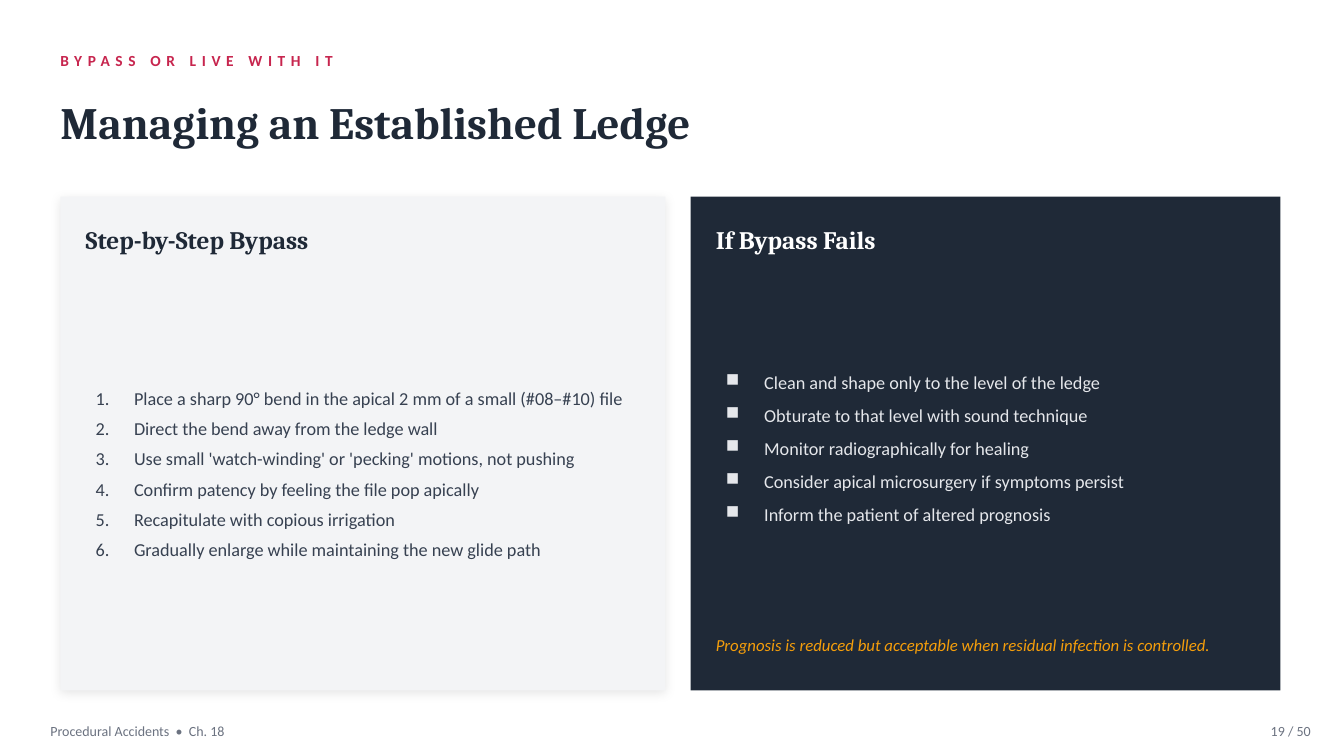
from lxml import etree
from pptx import Presentation
from pptx.dml.color import RGBColor
from pptx.enum.shapes import MSO_SHAPE
from pptx.enum.text import MSO_ANCHOR, MSO_AUTO_SIZE, PP_ALIGN
from pptx.oxml.ns import qn
from pptx.util import Inches, Pt

RECTANGLE = MSO_SHAPE.RECTANGLE
MIDDLE = MSO_ANCHOR.MIDDLE
NO_AUTOFIT = MSO_AUTO_SIZE.NONE
LEFT, RIGHT = PP_ALIGN.LEFT, PP_ALIGN.RIGHT
TITLE_ONLY = 5

HEADING_FONT, BODY_FONT = "Cambria", "Calibri"
COLORS = {
    "white": "FFFFFF",
    "navy": "1F2937",
    "crimson": "C7254E",
    "light_panel": "F3F4F6",
    "dark_text": "374151",
    "light_text": "E5E7EB",
    "amber": "F59E0B",
    "muted": "6B7280",
    "shadow": "000000",
}
LIST_INDENT = Inches(0.38)

BYPASS_STEPS = [
    "Place a sharp 90° bend in the apical 2 mm of a small (#08–#10) file",
    "Direct the bend away from the ledge wall",
    "Use small 'watch-winding' or 'pecking' motions, not pushing",
    "Confirm patency by feeling the file pop apically",
    "Recapitulate with copious irrigation",
    "Gradually enlarge while maintaining the new glide path",
]
FALLBACK_ACTIONS = [
    "Clean and shape only to the level of the ledge",
    "Obturate to that level with sound technique",
    "Monitor radiographically for healing",
    "Consider apical microsurgery if symptoms persist",
    "Inform the patient of altered prognosis",
]


def rgb(name):
    return RGBColor.from_string(COLORS[name])


def place(shape, left, top, width, height):
    shape.left, shape.top = Inches(left), Inches(top)
    shape.width, shape.height = Inches(width), Inches(height)


def add_bullet(paragraph, bullet):
    """Give a paragraph a hanging indent with a number or a character."""
    properties = paragraph._p.get_or_add_pPr()
    properties.set("marL", str(LIST_INDENT))
    properties.set("indent", str(-LIST_INDENT))
    if bullet == "number":
        etree.SubElement(properties, qn("a:buAutoNum"), type="arabicPeriod")
    else:
        etree.SubElement(properties, qn("a:buChar"), char=bullet)


def write_text(shape, lines, *, size, color, font=BODY_FONT, bold=False,
               italic=False, align=LEFT, spacing=0, space_after=0, bullet=None):
    frame = shape.text_frame
    frame.word_wrap = True
    frame.auto_size = NO_AUTOFIT
    frame.vertical_anchor = MIDDLE
    frame.margin_left = frame.margin_right = 0
    frame.margin_top = frame.margin_bottom = 0
    for index, line in enumerate(lines):
        paragraph = frame.add_paragraph() if index else frame.paragraphs[0]
        paragraph.alignment = align
        paragraph.space_after = Pt(space_after)
        if bullet:
            add_bullet(paragraph, bullet)
        run = paragraph.add_run()
        run.text = line
        run.font.name = font
        run.font.size = Pt(size)
        run.font.bold = bold
        run.font.italic = italic
        run.font.color.rgb = rgb(color)
        if spacing:
            run.font._element.set("spc", str(spacing * 100))


def add_text(slide, box, lines, **text_format):
    shape = slide.shapes.add_textbox(*(Inches(length) for length in box))
    write_text(shape, lines, **text_format)


def add_soft_shadow(shape):
    effects = shape._element.spPr.find(qn("a:effectLst"))
    shadow = etree.SubElement(
        effects, qn("a:outerShdw"), blurRad=str(Pt(8)), dist=str(Pt(2)),
        dir=str(90 * 60000), algn="bl", rotWithShape="0")
    color = etree.SubElement(shadow, qn("a:srgbClr"), val=COLORS["shadow"])
    etree.SubElement(color, qn("a:alpha"), val="10000")


def add_panel(slide, left, width, heading, *, fill, heading_color, shadow=False):
    panel = slide.shapes.add_shape(
        RECTANGLE, Inches(left), Inches(1.95), Inches(width), Inches(4.9))
    panel.fill.solid()
    panel.fill.fore_color.rgb = rgb(fill)
    panel.line.fill.background()
    panel.shadow.inherit = False
    if shadow:
        add_soft_shadow(panel)
    add_text(slide, (left + 0.25, 2.1, 5.5, 0.55), [heading],
             size=18, color=heading_color, font=HEADING_FONT, bold=True)


def main():
    presentation = Presentation()
    presentation.slide_width = Inches(13.33)
    presentation.slide_height = Inches(7.5)
    slide = presentation.slides.add_slide(presentation.slide_layouts[TITLE_ONLY])
    slide.background.fill.solid()
    slide.background.fill.fore_color.rgb = rgb("white")

    # Header
    add_text(slide, (0.6, 0.45, 12, 0.3), ["BYPASS OR LIVE WITH IT"],
             size=11, color="crimson", bold=True, spacing=4)
    title = slide.shapes.title
    place(title, 0.6, 0.78, 12, 0.85)
    write_text(title, ["Managing an Established Ledge"],
               size=32, color="navy", font=HEADING_FONT, bold=True)

    # Bypass steps
    add_panel(slide, 0.6, 6, "Step-by-Step Bypass",
              fill="light_panel", heading_color="navy", shadow=True)
    add_text(slide, (0.95, 2.7, 5.4, 4), BYPASS_STEPS,
             size=13, color="dark_text", space_after=6, bullet="number")

    # Fallback when bypass fails
    add_panel(slide, 6.85, 5.85, "If Bypass Fails",
              fill="navy", heading_color="white")
    add_text(slide, (7.2, 2.7, 5.4, 3.5), FALLBACK_ACTIONS,
             size=13, color="light_text", space_after=8, bullet="■")
    add_text(slide, (7.1, 6.05, 5.5, 0.7),
             ["Prognosis is reduced but acceptable when residual infection is controlled."],
             size=12, color="amber", italic=True)

    # Footer
    add_text(slide, (12.3, 7.1, 0.7, 0.3), ["19 / 50"],
             size=10, color="muted", align=RIGHT)
    add_text(slide, (0.5, 7.1, 5.5, 0.3), ["Procedural Accidents  •  Ch. 18"],
             size=10, color="muted")

    presentation.save("out.pptx")


if __name__ == "__main__":
    main()
